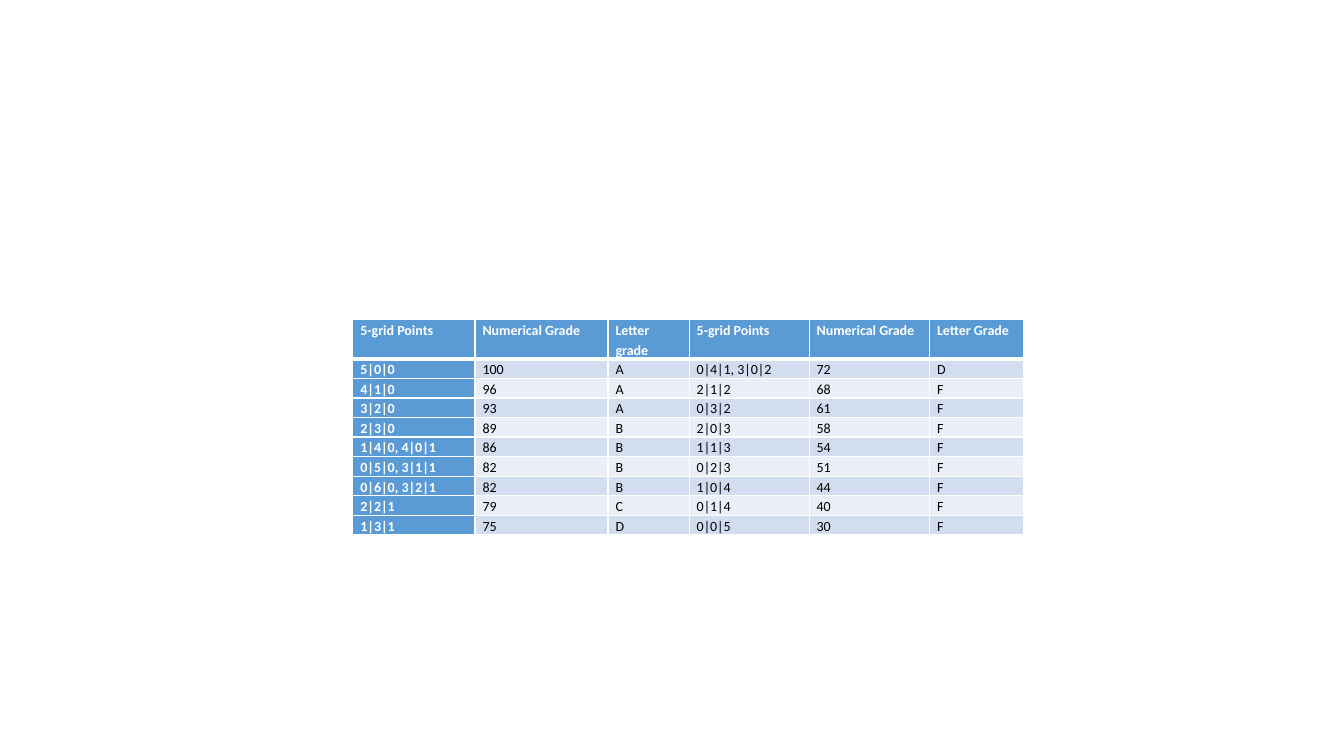
from lxml import etree
from pptx import Presentation
from pptx.dml.color import RGBColor
from pptx.oxml import ns
from pptx.util import Pt

WHITE = RGBColor(0xFF, 0xFF, 0xFF)
BLACK = RGBColor(0x00, 0x00, 0x00)
BLUE = RGBColor(0x5B, 0x9B, 0xD5)
DARK_BAND = RGBColor(0xD2, 0xDE, 0xEF)
LIGHT_BAND = RGBColor(0xEA, 0xEF, 0xF7)

GRADES = [
    ["5-grid Points", "Numerical Grade", "Letter grade",
     "5-grid Points", "Numerical Grade", "Letter Grade"],
    ["5|0|0", "100", "A", "0|4|1, 3|0|2", "72", "D"],
    ["4|1|0", "96", "A", "2|1|2", "68", "F"],
    ["3|2|0", "93", "A", "0|3|2", "61", "F"],
    ["2|3|0", "89", "B", "2|0|3", "58", "F"],
    ["1|4|0, 4|0|1", "86", "B", "1|1|3", "54", "F"],
    ["0|5|0, 3|1|1", "82", "B", "0|2|3", "51", "F"],
    ["0|6|0, 3|2|1", "82", "B", "1|0|4", "44", "F"],
    ["2|2|1", "79", "C", "0|1|4", "40", "F"],
    ["1|3|1", "75", "D", "0|0|5", "30", "F"],
]
COLUMN_WIDTHS = [87.3, 95, 58, 85.7, 86, 67]
HEADER_HEIGHT = 14.4
ROW_HEIGHT = 12.24


def add_border(cell, side, width):
    properties = cell._tc.get_or_add_tcPr()
    line = etree.SubElement(properties, ns.qn(f"a:ln{side}"), w=str(Pt(width)))
    fill = etree.SubElement(line, ns.qn("a:solidFill"))
    etree.SubElement(fill, ns.qn("a:srgbClr"), val=str(WHITE))


presentation = Presentation()
presentation.slide_width = Pt(960)
presentation.slide_height = Pt(540)
slide = presentation.slides.add_slide(presentation.slide_layouts[6])

table = slide.shapes.add_table(
    len(GRADES), len(COLUMN_WIDTHS), Pt(252), Pt(228.4),
    Pt(sum(COLUMN_WIDTHS)), Pt(HEADER_HEIGHT + ROW_HEIGHT * (len(GRADES) - 1))
).table
table.first_col = True
for column, width in zip(table.columns, COLUMN_WIDTHS):
    column.width = Pt(width)

for row_index, grades in enumerate(GRADES):
    table.rows[row_index].height = Pt(ROW_HEIGHT if row_index else HEADER_HEIGHT)
    for column_index, grade in enumerate(grades):
        cell = table.cell(row_index, column_index)
        is_heading = row_index == 0 or column_index == 0
        cell.margin_left = cell.margin_right = Pt(5.4)
        cell.margin_top = cell.margin_bottom = Pt(0)

        add_border(cell, "L", 1)
        add_border(cell, "R", 1)
        add_border(cell, "T", 3 if row_index == 1 else 1)
        add_border(cell, "B", 3 if row_index == 0 else 1)
        cell.fill.solid()
        band = DARK_BAND if row_index % 2 else LIGHT_BAND
        cell.fill.fore_color.rgb = BLUE if is_heading else band

        cell.text_frame.text = grade
        paragraph = cell.text_frame.paragraphs[0]
        paragraph.line_spacing = 1.15
        font = paragraph.runs[0].font
        font.name = "Calibri"
        font.size = Pt(10)
        font.bold = is_heading
        font.color.rgb = WHITE if is_heading else BLACK

presentation.save("out.pptx")
